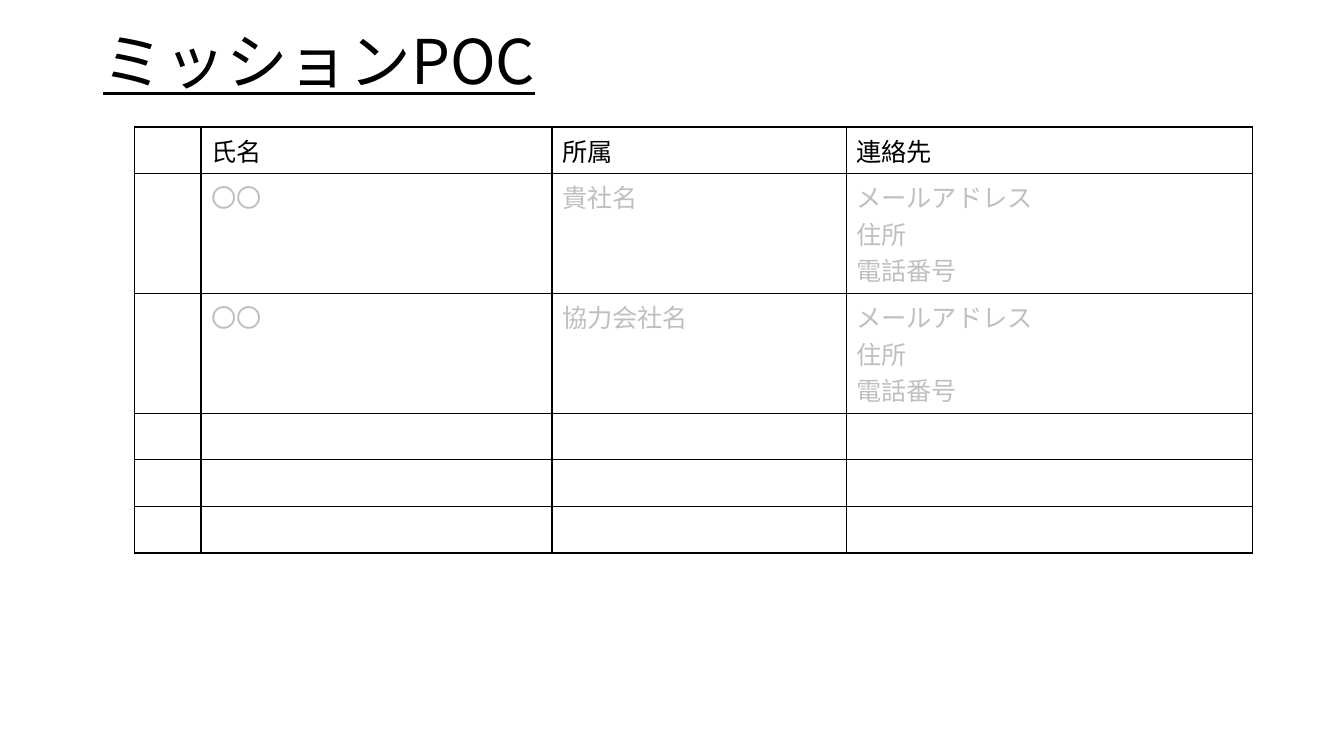
from dataclasses import dataclass

from lxml.etree import SubElement
from pptx import Presentation
from pptx.dml.color import RGBColor
from pptx.enum.text import MSO_ANCHOR, MSO_AUTO_SIZE, PP_ALIGN
from pptx.oxml.ns import qn
from pptx.util import Inches, Pt

FONT = "Noto Sans CJK JP"
BLACK = RGBColor(0x00, 0x00, 0x00)
GREY = RGBColor(0xBF, 0xBF, 0xBF)

SLIDE_WIDTH = Inches(13.33)
SLIDE_HEIGHT = Inches(7.5)

# Percentages of the slide's width and height
COLUMN_WIDTHS = (4.98, 26.11, 21.9, 30.21)
SINGLE_LINE_ROW = 6.15
CONTACT_ROW = 15.85
CONTACT_DETAILS = "メールアドレス\n住所\n電話番号"


@dataclass(frozen=True)
class Box:
    """A frame in percentages of the slide's width and height."""
    left: float
    top: float
    width: float
    height: float

    def emu(self) -> tuple[int, int, int, int]:
        return (across(self.left), down(self.top),
                across(self.width), down(self.height))


@dataclass(frozen=True)
class ContactRow:
    name: str = ""
    affiliation: str = ""
    contact: str = ""
    height: float = SINGLE_LINE_ROW
    color: RGBColor = BLACK

    def texts(self) -> tuple[str, ...]:
        return "", self.name, self.affiliation, self.contact


ROWS = (
    ContactRow("氏名", "所属", "連絡先"),
    ContactRow("〇〇", "貴社名", CONTACT_DETAILS, CONTACT_ROW, GREY),
    ContactRow("〇〇", "協力会社名", CONTACT_DETAILS, CONTACT_ROW, GREY),
    *[ContactRow()] * 3,
)
TITLE_BOX = Box(6.9, 2, 86.27, 13.07)
TABLE_BOX = Box(9.98, 16.8, sum(COLUMN_WIDTHS), sum(row.height for row in ROWS))


def across(percent: float) -> int:
    return round(SLIDE_WIDTH * percent / 100)


def down(percent: float) -> int:
    return round(SLIDE_HEIGHT * percent / 100)


def style_paragraph(paragraph, size: float, color: RGBColor) -> None:
    """Set the font for both Latin and Japanese characters."""
    font = paragraph.font
    font.name, font.size = FONT, Pt(size)
    font.color.rgb = color
    properties = paragraph._p.pPr.find(qn("a:defRPr"))
    SubElement(properties, qn("a:ea"), typeface=FONT)


def add_borders(cell) -> None:
    properties = cell._tc.get_or_add_tcPr()
    for side in ("lnL", "lnR", "lnT", "lnB"):
        line = SubElement(properties, qn(f"a:{side}"), w=str(Pt(1)))
        fill = SubElement(line, qn("a:solidFill"))
        SubElement(fill, qn("a:srgbClr"), val=str(BLACK))


def fill_title(title) -> None:
    title.left, title.top, title.width, title.height = TITLE_BOX.emu()
    frame = title.text_frame
    frame.text = "ミッションPOC"
    frame.auto_size = MSO_AUTO_SIZE.NONE
    frame.vertical_anchor = MSO_ANCHOR.MIDDLE
    paragraph = frame.paragraphs[0]
    paragraph.alignment = PP_ALIGN.LEFT
    paragraph.line_spacing = 0.9
    style_paragraph(paragraph, 44, BLACK)
    paragraph.font.underline = True


def fill_cell(cell, text: str, color: RGBColor) -> None:
    cell.text = text
    add_borders(cell)
    cell.fill.background()
    for paragraph in cell.text_frame.paragraphs:
        style_paragraph(paragraph, 18, color)


def add_contact_table(slide) -> None:
    table = slide.shapes.add_table(
        len(ROWS), len(COLUMN_WIDTHS), *TABLE_BOX.emu()).table
    table.first_row = table.horz_banding = False
    for column, width in zip(table.columns, COLUMN_WIDTHS):
        column.width = across(width)
    for table_row, row in zip(table.rows, ROWS):
        table_row.height = down(row.height)
        for cell, text in zip(table_row.cells, row.texts()):
            fill_cell(cell, text, row.color)


def main() -> None:
    presentation = Presentation()
    presentation.slide_width = SLIDE_WIDTH
    presentation.slide_height = SLIDE_HEIGHT
    title_only = presentation.slide_layouts[5]
    slide = presentation.slides.add_slide(title_only)
    fill_title(slide.shapes.title)
    add_contact_table(slide)
    presentation.save("out.pptx")


if __name__ == "__main__":
    main()
